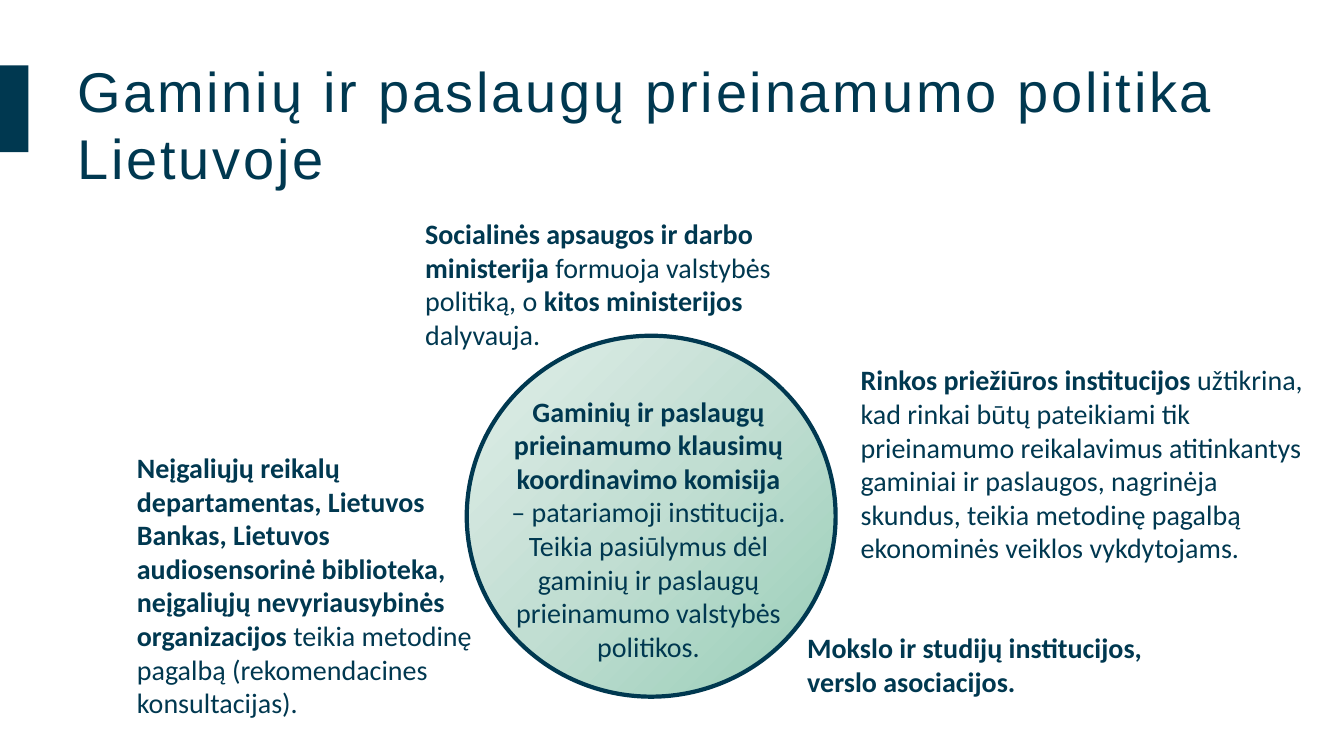
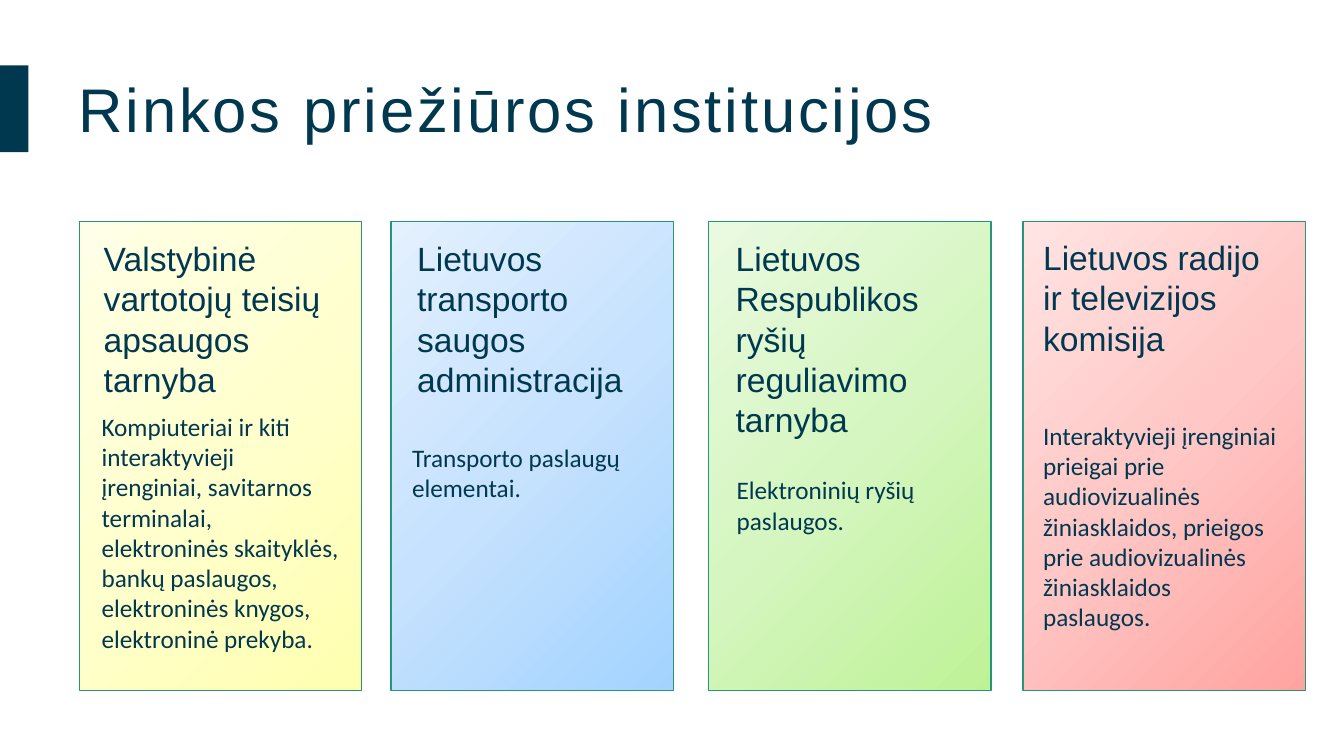
from copy import deepcopy
from dataclasses import dataclass

from pptx import Presentation
from pptx.dml.color import RGBColor
from pptx.enum import shapes, text
from pptx.oxml.ns import qn
from pptx.util import Pt


@dataclass(frozen=True)
class Theme:
    navy: str = "003850"
    card_edge: str = "239778"
    heading_font: str = "Arial"
    body_font: str = "Calibri"
    card_heading: int = 24
    card_body: int = 18
    body: int = 20
    title_spacing: int = 2


THEME = Theme()
SLIDE_SIZE = (960, 540)
TITLE_BAND = (0, 46.8, 20.2, 61.9)

# Gradient stops run from the bottom right corner to the top left one.
STOPS = (0, 0.5, 1)

POLICY = {
    "title": "Gaminių ir paslaugų prieinamumo politika Lietuvoje",
    "title_area": (48.2, 36, 866.9, 104.4),
    "title_size": 40,
    "circle_area": (333.4, 239.8, 263.5, 257.8),
    "circle_colors": ("97CDB7", "C1DED2", "E1EEE9"),
    "circle_text_area": (356.4, 277.9, 213.8, 200.9),
    "circle_text": [
        ("Gaminių ir paslaugų prieinamumo klausimų koordinavimo komisija ", True),
        ("– patariamoji institucija. Teikia pasiūlymus dėl gaminių ir paslaugų "
         "prieinamumo valstybės politikos.", False),
    ],
}

# (area, [(words, bold), ...])
PARTICIPANTS = [
    ((296.6, 151.2, 291.6, 104.4), [
        ("Socialinės apsaugos ir darbo ministerija ", True),
        ("formuoja valstybės politiką, o ", False),
        ("kitos ministerijos ", True),
        ("dalyvauja.", False),
    ]),
    ((90.7, 318.2, 253.4, 200.9), [
        ("Neįgaliųjų reikalų departamentas, Lietuvos Bankas, Lietuvos "
         "audiosensorinė biblioteka, neįgaliųjų nevyriausybinės organizacijos ", True),
        ("teikia metodinę pagalbą (rekomendacines konsultacijas).", False),
    ]),
    ((607.7, 255.6, 336.2, 152.6), [
        ("Rinkos priežiūros institucijos ", True),
        ("užtikrina, kad rinkai būtų pateikiami tik prieinamumo reikalavimus "
         "atitinkantys gaminiai ir paslaugos, nagrinėja skundus, teikia metodinę "
         "pagalbą ekonominės veiklos vykdytojams.", False),
    ]),
    ((569.5, 447.1, 263.5, 55.4), [
        ("Mokslo ir studijų institucijos, verslo asociacijos.", True),
    ]),
]

AUTHORITIES = {
    "title": "Rinkos priežiūros institucijos",
    "title_area": (49, 70.6, 833, 38.2),
    "title_size": 44,
    "title_line": 27,
}
CARD_TOP, CARD_WIDTH, CARD_HEIGHT = 158.4, 201.6, 334.8
HEADING_WIDTH, DETAIL_WIDTH = 186.5, 185

# Each heading and detail place is (left, top, height).
CARDS = [
    {"left": 56.9, "colors": ("FFFFAF", "FFFFCE", "FFFFE7"),
     "heading": "Valstybinė vartotojų teisių apsaugos tarnyba",
     "heading_place": (67, 166.3, 123.8),
     "detail": "Kompiuteriai ir kiti interaktyvieji įrenginiai, savitarnos "
               "terminalai, elektroninės skaityklės, bankų paslaugos, "
               "elektroninės knygos, elektroninė prekyba.",
     "detail_place": (65.5, 290.2, 181.4)},
    {"left": 279.4, "colors": ("A3D3FF", "C6E2FE", "E3F0FE"),
     "heading": "Lietuvos transporto saugos administracija",
     "heading_place": (290.9, 166.3, 123.8),
     "detail": "Transporto paslaugų elementai.",
     "detail_place": (287.3, 312.5, 51.1)},
    {"left": 506.2, "colors": ("BEF297", "D5F6C0", "EAFAE0"),
     "heading": "Lietuvos Respublikos ryšių reguliavimo tarnyba",
     "heading_place": (518.4, 166.3, 152.6),
     "detail": "Elektroninių ryšių paslaugos.",
     "detail_place": (519.1, 335.5, 51.1)},
    {"left": 730.8, "colors": ("FFA3A0", "FFC7C5", "FFE4E3"),
     "heading": "Lietuvos radijo ir televizijos komisija",
     "heading_place": (738, 165.6, 94.3),
     "detail": "Interaktyvieji įrenginiai prieigai prie audiovizualinės "
               "žiniasklaidos, prieigos prie audiovizualinės žiniasklaidos "
               "paslaugos.",
     "detail_place": (738, 296.6, 159.8)},
]


def points(area):
    return [Pt(length) for length in area]


def rgb(color):
    return RGBColor.from_string(color)


def add_text(page, area, parts, size, font=THEME.body_font):
    """Add one paragraph made of (words, bold) parts; return its box."""
    box = page.shapes.add_textbox(*points(area))
    frame = box.text_frame
    frame.word_wrap = True
    frame.auto_size = text.MSO_AUTO_SIZE.SHAPE_TO_FIT_TEXT
    for words, bold in parts:
        span = frame.paragraphs[0].add_run()
        span.text = words
        span.font.name = font
        span.font.size = Pt(size)
        span.font.bold = bold
        span.font.color.rgb = rgb(THEME.navy)
    return box


def add_panel(page, kind, area, colors, edge=None, edge_width=1):
    """Add a shape with a plain fill for one colour, a gradient for three."""
    panel = page.shapes.add_shape(kind, *points(area))
    panel.shadow.inherit = False
    if len(colors) == 1:
        panel.fill.solid()
        panel.fill.fore_color.rgb = rgb(colors[0])
    else:
        panel.fill.gradient()
        panel.fill.gradient_angle = 135
        stop_list = panel._element.spPr.find(".//" + qn("a:gsLst"))
        stop_list.append(deepcopy(stop_list[-1]))
        for stop, position, color in zip(panel.fill.gradient_stops, STOPS, colors):
            stop.position = position
            stop.color.rgb = rgb(color)
    if edge:
        panel.line.color.rgb = rgb(edge)
        panel.line.width = Pt(edge_width)
    else:
        panel.line.fill.background()
    return panel


def add_page(deck, content):
    """Add a blank page with the side band and the title."""
    page = deck.slides.add_slide(deck.slide_layouts[6])
    add_panel(page, shapes.MSO_SHAPE.RECTANGLE, TITLE_BAND, [THEME.navy])
    box = add_text(page, content["title_area"], [(content["title"], False)],
                   content["title_size"], THEME.heading_font)
    box.text_frame.vertical_anchor = text.MSO_ANCHOR.MIDDLE
    para = box.text_frame.paragraphs[0]
    if "title_line" in content:
        para.line_spacing = Pt(content["title_line"])
    properties = para.runs[0]._r.get_or_add_rPr()
    properties.set("spc", str(THEME.title_spacing * 100))
    return page


def build_policy(deck):
    page = add_page(deck, POLICY)
    add_panel(page, shapes.MSO_SHAPE.OVAL, POLICY["circle_area"],
              POLICY["circle_colors"], THEME.navy, 3)
    for area, parts in PARTICIPANTS:
        add_text(page, area, parts, THEME.body)
    box = add_text(page, POLICY["circle_text_area"], POLICY["circle_text"], THEME.body)
    box.text_frame.paragraphs[0].alignment = text.PP_ALIGN.CENTER


def build_authorities(deck):
    page = add_page(deck, AUTHORITIES)
    styles = [
        ("heading", HEADING_WIDTH, THEME.card_heading, THEME.heading_font),
        ("detail", DETAIL_WIDTH, THEME.card_body, THEME.body_font),
    ]
    for card in CARDS:
        area = (card["left"], CARD_TOP, CARD_WIDTH, CARD_HEIGHT)
        add_panel(page, shapes.MSO_SHAPE.RECTANGLE, area, card["colors"], THEME.card_edge)
        for part, width, size, font in styles:
            left, top, height = card[part + "_place"]
            add_text(page, (left, top, width, height), [(card[part], False)], size, font)


def main():
    deck = Presentation()
    deck.slide_width, deck.slide_height = points(SLIDE_SIZE)
    build_policy(deck)
    build_authorities(deck)
    deck.save("out.pptx")


if __name__ == "__main__":
    main()
